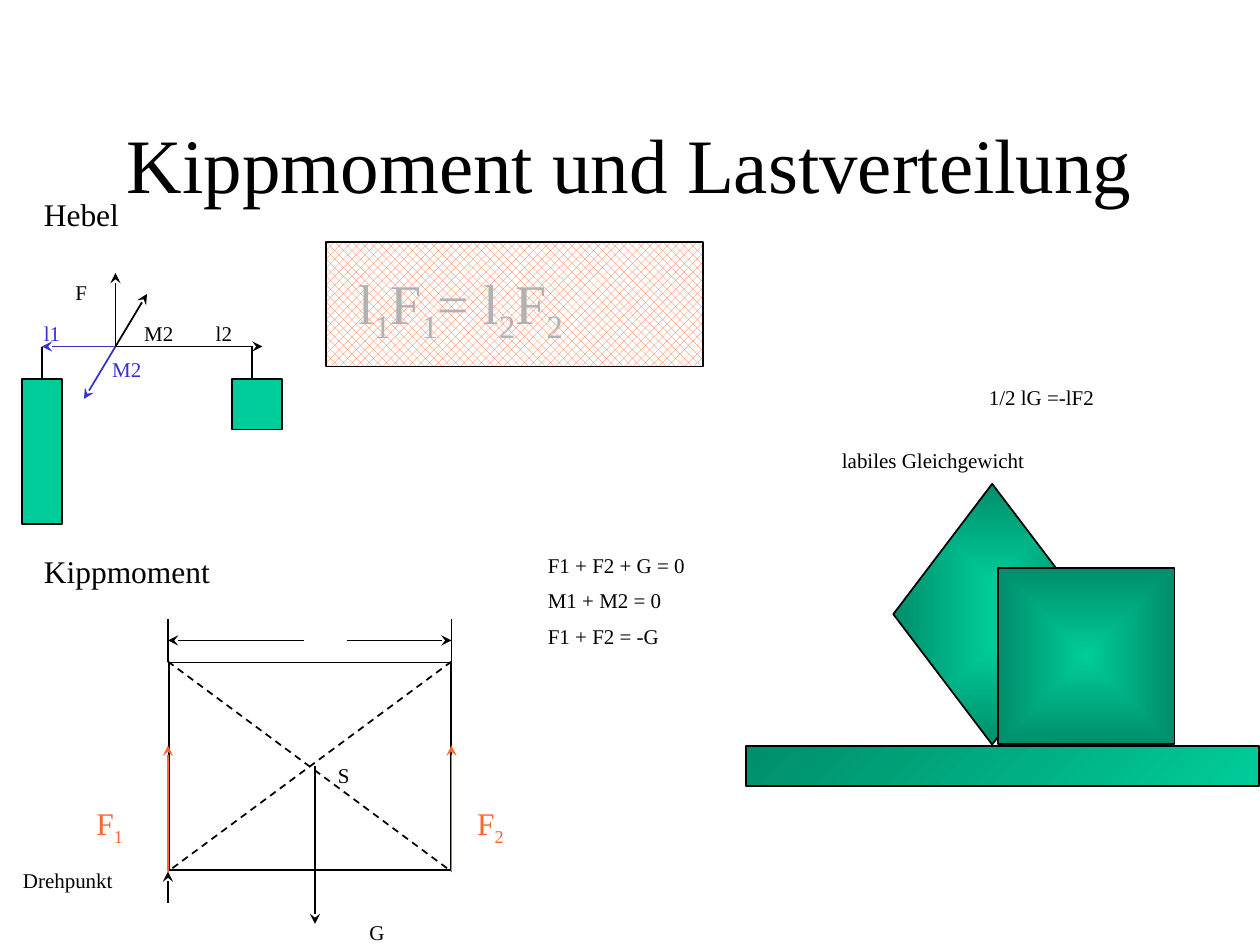
from lxml.etree import SubElement
from pptx import Presentation
from pptx.dml.color import RGBColor
from pptx.enum.dml import MSO_LINE as Dash, MSO_PATTERN as Pattern
from pptx.enum.shapes import MSO_CONNECTOR as Connector, MSO_SHAPE as Shape
from pptx.enum.text import MSO_ANCHOR as Anchor, PP_ALIGN as Align
from pptx.oxml.ns import qn
from pptx.util import Pt

BLACK, WHITE, BLUE, ORANGE = "000000", "FFFFFF", "3333CC", "FF6633"
GREEN, DARK_GREEN, GREY = "00CC99", "008E6B", "B2B2B2"


def rgb(hex_code):
    """Turn a hex string into a colour."""
    return RGBColor.from_string(hex_code)


def write(frame, lines, size=12, color=BLACK, tabs=(), align=Align.LEFT):
    """Fill a frame with lines of text or (text, colour) runs; _ toggles subscript."""
    frame.word_wrap = True
    for index, line in enumerate(lines):
        paragraph = frame.add_paragraph() if index else frame.paragraphs[0]
        paragraph.alignment = align
        if index:
            paragraph.space_before = Pt(size / 2)
        if tabs:
            stops = SubElement(paragraph._p.get_or_add_pPr(), qn("a:tabLst"))
            for position in tabs:
                SubElement(stops, qn("a:tab"), pos=str(Pt(position)), algn="l")
        for text, tone in [(line, color)] if isinstance(line, str) else line:
            for part, piece in enumerate(text.split("_")):
                if not piece:
                    continue
                run = paragraph.add_run()
                run.text = piece
                run.font.name = "Times New Roman"
                run.font.size = Pt(size)
                run.font.color.rgb = rgb(tone)
                if part % 2:
                    run._r.get_or_add_rPr().set("baseline", "-25000")


class Sketch:
    """Hold the outline style and the current slide."""

    def __init__(self, slide, outline=BLACK, weight=1):
        """Keep the slide and the line defaults."""
        self.slide, self.outline, self.weight = slide, outline, weight

    def title(self, text, left, top, width, height):
        """Place the title placeholder."""
        heading = self.slide.shapes.title
        heading.left, heading.top = Pt(left), Pt(top)
        heading.width, heading.height = Pt(width), Pt(height)
        heading.text_frame.vertical_anchor = Anchor.MIDDLE
        write(heading.text_frame, [text], size=44, align=Align.CENTER)

    def label(self, left, top, width, height, *lines, **style):
        """Add a text box."""
        box = self.slide.shapes.add_textbox(Pt(left), Pt(top), Pt(width), Pt(height))
        write(box.text_frame, lines, **style)

    def body(self, left, top, width, height, kind=Shape.RECTANGLE, color=None):
        """Add an outlined shape and return it."""
        solid = self.slide.shapes.add_shape(kind, Pt(left), Pt(top), Pt(width), Pt(height))
        solid.shadow.inherit = False
        solid.line.color.rgb = rgb(self.outline)
        solid.line.width = Pt(self.weight)
        if color:
            solid.fill.solid()
            solid.fill.fore_color.rgb = rgb(color)
        else:
            solid.fill.background()
        return solid

    def hatched(self, *box):
        """Add a patterned rectangle."""
        fill = self.body(*box).fill
        fill.patterned()
        fill.pattern = Pattern.PERCENT_50
        fill.fore_color.rgb, fill.back_color.rgb = rgb(ORANGE), rgb(WHITE)

    def shaded(self, *box, colors=(GREEN, DARK_GREEN), kind=Shape.RECTANGLE, radial=True):
        """Add a shape with a gradient, from its centre or diagonal."""
        solid = self.body(*box, kind=kind)
        solid.fill.gradient()
        for stop, color in zip(solid.fill.gradient_stops, colors):
            stop.color.rgb = rgb(color)
        solid.fill.gradient_angle = 315
        if radial:
            gradient = solid._element.spPr.find(qn("a:gradFill"))
            gradient.remove(gradient.find(qn("a:lin")))
            centre = SubElement(gradient, qn("a:path"), path="shape")
            SubElement(centre, qn("a:fillToRect"), l="50000", t="50000", r="50000", b="50000")

    def line(self, start, end, color=None, arrow=False, dashed=False):
        """Draw a straight line, optionally dashed or with an arrowhead."""
        stroke = self.slide.shapes.add_connector(
            Connector.STRAIGHT, *(Pt(value) for value in (*start, *end)))
        stroke.line.color.rgb = rgb(color or self.outline)
        stroke.line.width = Pt(self.weight)
        if dashed:
            stroke.line.dash_style = Dash.DASH
        properties = stroke._element.spPr
        if arrow:
            SubElement(properties.find(qn("a:ln")), qn("a:tailEnd"), type="stealth")
        SubElement(properties, qn("a:effectLst"))

    def arrow(self, start, end, color=None):
        """Draw an arrow."""
        self.line(start, end, color, arrow=True)


def draw_lever(sketch):
    """Draw the lever with its two weights and the lever law."""
    sketch.label(18, 108, 246, 29, "Hebel", size=18)
    pivot, arm_y = (66, 198), 198
    sketch.arrow(pivot, (66, 156))
    sketch.arrow(pivot, (150, arm_y))
    sketch.line((144, arm_y), (144, 222))
    sketch.body(132.5, 216.7, 28.8, 28.8, color=GREEN)
    sketch.arrow(pivot, (24, arm_y), BLUE)
    sketch.line((24, arm_y), (24, 234))
    sketch.body(12.4, 216.7, 23, 82.8, color=GREEN)
    sketch.arrow(pivot, (48, 228), BLUE)
    sketch.arrow(pivot, (84, 168))
    sketch.label(18, 179.5, 162, 43, [("l1", BLUE), ("\t\tM2\tl2", BLACK)],
                 [("\tM2", BLUE)], tabs=(39, 57.3, 98.2))
    sketch.label(36, 156, 24, 22, "F")
    sketch.hatched(186.5, 138.3, 215.2, 71.2)
    sketch.label(198, 150, 174, 45, "l_1_F_1_= l_2_F_2", size=32, color=GREY)


def draw_tilting_block(sketch):
    """Draw the block on two supports with its forces."""
    sketch.label(18, 312, 354, 29, "Kippmoment", size=18)
    left, right, top, bottom = 96, 258, 378, 498
    sketch.body(96.5, 378.5, 161.2, 118.8)
    sketch.line((left, top), (right, bottom), dashed=True)
    sketch.line((right, top), (left, bottom), dashed=True)
    sketch.arrow((180, 438), (180, 528))
    for side, inner in ((left, 174), (right, 198)):
        sketch.line((side, top), (side, top - 24))
        sketch.arrow((inner, top - 12), (side, top - 12))
        sketch.arrow((side, bottom), (side, bottom - 72), ORANGE)
    sketch.arrow((left, bottom + 18), (left, bottom))
    sketch.label(186, 432, 24, 22, "S")
    sketch.label(36, 456, 372, 29, "\tF_1_\tF_2", size=18, color=ORANGE, tabs=(12, 229.5))
    sketch.label(6, 492, 90, 22, "Drehpunkt")
    sketch.label(204, 522, 60, 22, "G")
    sketch.label(306, 312, 210, 65, "F1 + F2 + G = 0", "M1 + M2 = 0", "F1 + F2 = -G")


def draw_equilibrium(sketch):
    """Draw the bodies standing on the ground."""
    sketch.shaded(426.2, 426.4, 293.2, 22.8, colors=(DARK_GREEN, GREEN), radial=False)
    sketch.label(474, 252, 245.5, 22, "labiles Gleichgewicht")
    sketch.shaded(510.5, 276.5, 113, 149, kind=Shape.DIAMOND)
    sketch.shaded(570.4, 324.5, 100.8, 100.8)
    sketch.label(558, 216, 138, 22, "1/2 lG =-lF2")


def main():
    """Build and save the slide."""
    deck = Presentation()
    deck.slide_width, deck.slide_height = Pt(720), Pt(540)
    sketch = Sketch(deck.slides.add_slide(deck.slide_layouts[5]))
    sketch.title("Kippmoment und Lastverteilung", 54, 48, 612, 90)
    draw_lever(sketch)
    draw_tilting_block(sketch)
    draw_equilibrium(sketch)
    deck.save("out.pptx")


if __name__ == "__main__":
    main()
